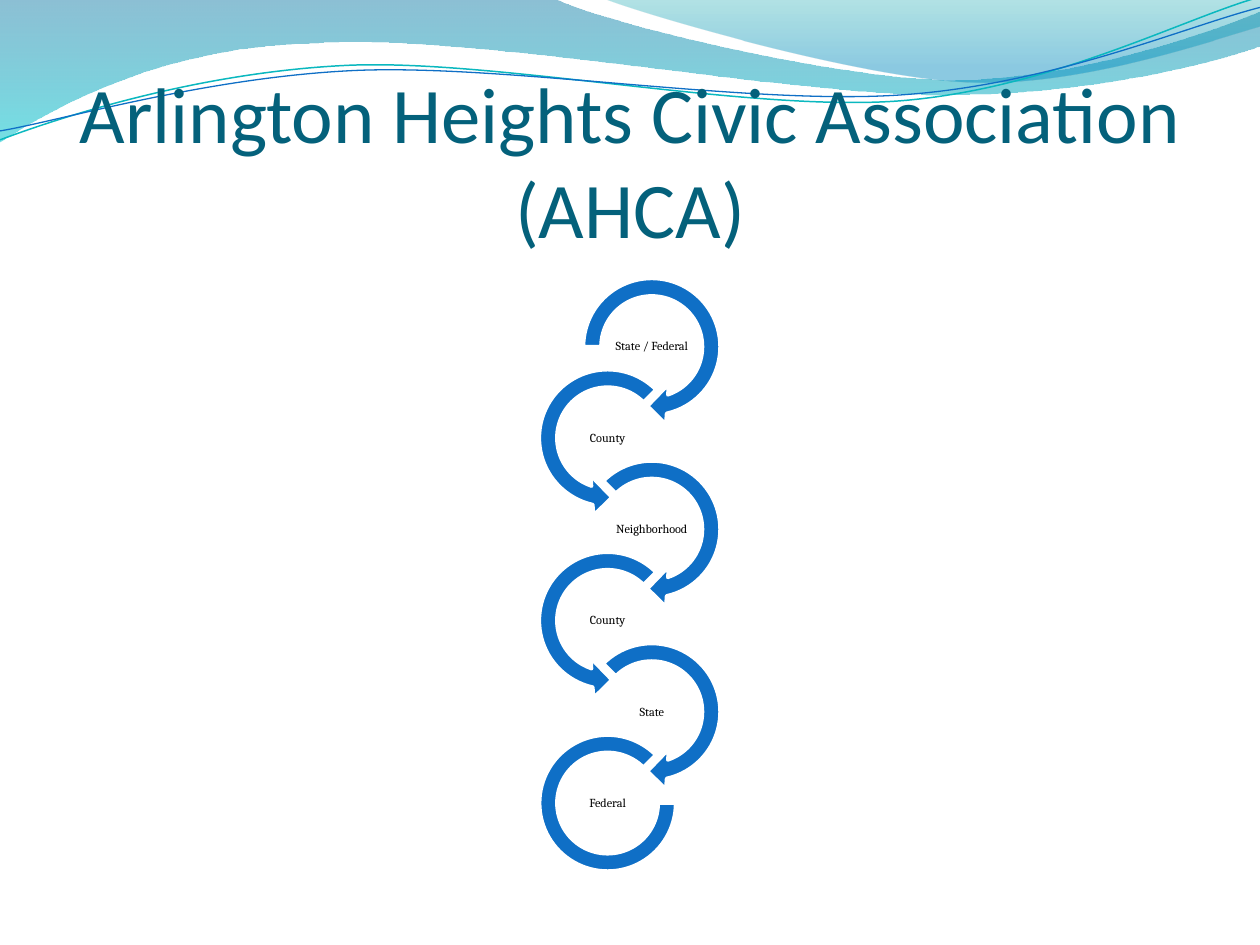
from dataclasses import dataclass

from lxml import etree
from pptx import Presentation
from pptx import util as u
from pptx.dml.color import RGBColor
from pptx.enum import shapes, text
from pptx.oxml.ns import qn


@dataclass(frozen=True)
class Theme:
    title_font: str = "Calibri"
    label_font: str = "Cambria"
    title_size: int = 45
    label_size: int = 7
    title: str = "04617B"
    label: str = "000000"
    arrow: str = "0F6FC6"
    outline: str = "FFFFFF"
    teal_line: str = "0AB8BF"
    blue_line: str = "0F6FC6"
    # Gradient stops: position, colour, opacity in percent
    wide_wave: tuple = ((0, "0074A1", 45), (1, "00C6CF", 55))
    right_wave: tuple = ((0, "00A1A9", 30), (0.8, "008BBF", 45))


theme = Theme()
color = RGBColor.from_string

presentation = Presentation()
presentation.slide_width = u.Cm(25.4)
presentation.slide_height = u.Cm(19.05)
slide = presentation.slides.add_slide(presentation.slide_layouts[5])


def add_wave(start, segments, closed):
    """Draw a path in cm; one-point segments are lines, three-point ones curves."""
    ends = [(u.Cm(x), u.Cm(y)) for x, y in (segment[-1] for segment in segments)]
    builder = slide.shapes.build_freeform(u.Cm(start[0]), u.Cm(start[1]))
    builder.add_line_segments(ends, close=closed)
    wave = builder.convert_to_shape()
    wave.shadow.inherit = False
    # Turn the straight segments that have control points into Bézier curves
    lines = list(wave._element.spPr.iter(qn("a:lnTo")))
    for line, segment in zip(lines, segments):
        if len(segment) == 3:
            curve = etree.Element(qn("a:cubicBezTo"))
            for x, y in segment:
                etree.SubElement(curve, qn("a:pt"), x=str(u.Cm(x) - wave.left),
                                 y=str(u.Cm(y) - wave.top))
            line.getparent().replace(line, curve)
    return wave


def format_text(shape, font_name, size, font_color, anchor):
    """Centre the text of a shape and style its run."""
    frame = shape.text_frame
    frame.word_wrap = True
    frame.auto_size = text.MSO_AUTO_SIZE.NONE
    frame.vertical_anchor = anchor
    frame.margin_left = frame.margin_right = frame.margin_top = frame.margin_bottom = 0
    paragraph = frame.paragraphs[0]
    paragraph.alignment = text.PP_ALIGN.CENTER
    font = paragraph.runs[0].font
    font.name = font_name
    font.size = u.Pt(size)
    font.color.rgb = color(font_color)


# Filled waves along the top edge
filled_waves = [
    ((0, 0), [
        [(11.18, -0.03)],
        [(12.09, 0.43), (16.87, 1.6), (19.25, 1.6)],
        [(21.67, 1.6), (24.33, 0.66), (25.4, 0.23)],
        [(25.43, 0.91)],
        [(24.97, 1.12), (22.1, 1.93), (18.95, 1.91)],
        [(15.8, 1.91), (9.7, 0.71), (6.53, 0.86)],
        [(3.28, 0.91), (1.17, 2.11), (-0.03, 2.87)],
        [(0, 0)],
    ], theme.wide_wave),
    ((12.17, -0.03), [
        [(12.93, 0.28), (17.32, 1.57), (19.53, 1.65)],
        [(21.74, 1.75), (24.41, 0.81), (25.4, 0.53)],
        [(25.4, 0)],
        [(12.17, -0.03)],
    ], theme.right_wave),
]
for start, segments, stops in filled_waves:
    wave = add_wave(start, segments, closed=True)
    wave.line.fill.background()
    wave.fill.gradient()
    wave.fill.gradient_angle = 270
    for stop, (position, stop_color, opacity) in zip(wave.fill.gradient_stops, stops):
        stop.position = position
        stop.color.rgb = color(stop_color)
    for rgb, (position, stop_color, opacity) in zip(
        wave._element.spPr.iter(qn("a:srgbClr")), stops
    ):
        etree.SubElement(rgb, qn("a:alpha"), val=str(opacity * 1000))

# Thin wave lines, slightly tilted
wave_lines = [
    ((-0.05, 2.22), [
        [(1.19, 1.82), (4.02, 1.04), (7.06, 1.05)],
        [(10.05, 1.07), (15.02, 2.37), (18.08, 2.29)],
        [(21.13, 2.2), (23.87, 0.91), (25.41, 0.55)],
    ], theme.teal_line, 0.85),
    ((-0.04, 2.04), [
        [(1.16, 1.9), (4.17, 1.15), (7.2, 1.16)],
        [(10.25, 1.18), (15.13, 2.25), (18.18, 2.17)],
        [(21.21, 2.1), (23.93, 1.06), (25.45, 0.75)],
    ], theme.blue_line, 0.75),
]
for start, segments, line_color, width in wave_lines:
    wave = add_wave(start, segments, closed=False)
    wave.rotation = 357.3
    wave.fill.background()
    wave.line.color.rgb = color(line_color)
    wave.line.width = u.Pt(width)

# Title, brought in front of the waves
title = slide.shapes.title
title.left, title.top = u.Cm(1.27), u.Cm(1.96)
title.width, title.height = u.Cm(22.86), u.Cm(3.16)
title.text_frame.text = "Arlington Heights Civic Association (AHCA)"
format_text(title, theme.title_font, theme.title_size, theme.title,
            text.MSO_ANCHOR.BOTTOM)
title.text_frame.margin_top = u.Cm(0.13)
slide.shapes._spTree.append(title._element)

# Chain of circular arrows, alternating right and left
right, left = 11.54, 10.65
chain_top, pitch = 5.39, 1.84
arrow_size, arc_inset = 3.2, 0.23
kinds = shapes.MSO_SHAPE
first_turn = (kinds.CIRCULAR_ARROW, (0.11, 11.42, 45, 108, 0.125))
right_turn = (kinds.CIRCULAR_ARROW, (0.11, 11.42, 45, 135, 0.125))
left_turn = (kinds.LEFT_CIRCULAR_ARROW, (0.11, 11.42, 63, 189, 0.125))
last_arc = (kinds.BLOCK_ARC, (0, 189, 0.127))
levels = [
    ("State / Federal", first_turn),
    ("County", left_turn),
    ("Neighborhood", right_turn),
    ("County", left_turn),
    ("State", right_turn),
    ("Federal", last_arc),
]
for index, (name, (kind, adjustments)) in enumerate(levels):
    x = left if index % 2 else right
    y = chain_top + index * pitch
    inset = arc_inset if kind == kinds.BLOCK_ARC else 0
    size = u.Cm(arrow_size - 2 * inset)
    arrow = slide.shapes.add_shape(kind, u.Cm(x + inset), u.Cm(y + inset), size, size)
    for number, value in enumerate(adjustments):
        arrow.adjustments[number] = value
    arrow.shadow.inherit = False
    arrow.fill.solid()
    arrow.fill.fore_color.rgb = color(theme.arrow)
    arrow.line.color.rgb = color(theme.outline)
    arrow.line.width = u.Pt(2)

    label = slide.shapes.add_textbox(u.Cm(x + 0.71), u.Cm(y + 1.16),
                                     u.Cm(1.78), u.Cm(0.89))
    label.text_frame.text = name
    format_text(label, theme.label_font, theme.label_size, theme.label,
                text.MSO_ANCHOR.MIDDLE)
    label.text_frame.paragraphs[0].line_spacing = 0.9

presentation.save("out.pptx")
